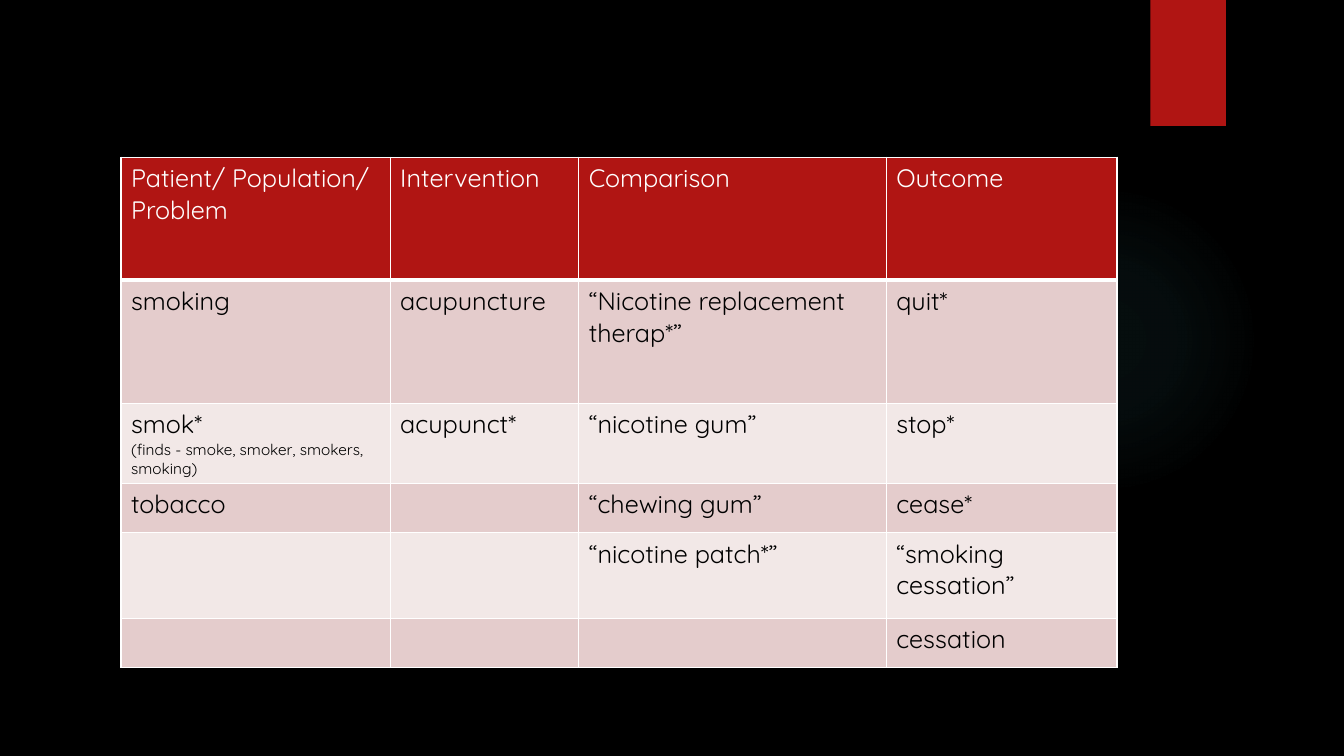
"""Build a slide with a table of search terms for a clinical question."""
import pptx
import pptx.dml.color
import pptx.enum.shapes
import pptx.oxml
import pptx.oxml.ns
import pptx.util

inch = pptx.util.Inches
kinds = pptx.enum.shapes.MSO_SHAPE
ns = pptx.oxml.ns.nsdecls("a")
red, black, white = "B01513", "000000", "FFFFFF"
bands = ["E4CCCC", "F2E8E7"]


def paint(fill, tone):
    fill.solid()
    fill.fore_color.rgb = pptx.dml.color.RGBColor.from_string(tone)


def add_box(kind, *at):
    box = slide.shapes.add_shape(kind, *map(inch, at))
    box.shadow.inherit = False
    box.line.fill.background()
    return box


deck = pptx.Presentation()
deck.slide_width, deck.slide_height = inch(13.33), inch(7.5)
slide = deck.slides.add_slide(deck.slide_layouts[6])
paint(slide.background.fill, black)

glow = add_box(kinds.OVAL, 9.41, 1.83, 3.08, 3.08)
glow.fill.background()
stops = "".join(
    f'<a:gs pos="{pos}000"><a:srgbClr val="50B9C1"><a:alpha val="{alpha}000"/></a:srgbClr></a:gs>'
    for pos, alpha in [(0, 7), (36, 6), (69, 0)]
)
grad = pptx.oxml.parse_xml(
    f'<a:gradFill {ns}><a:gsLst>{stops}</a:gsLst><a:path path="circle">'
    '<a:fillToRect l="50000" t="50000" r="50000" b="50000"/></a:path></a:gradFill>'
)
props = glow.element.spPr
props.replace(props.find(pptx.oxml.ns.qn("a:noFill")), grad)

tab = add_box(kinds.RECTANGLE, 11.41, 0, 0.75, 1.25)
paint(tab.fill, red)

terms = [
    ["Patient/ Population/ Problem", "Intervention", "Comparison", "Outcome"],
    ["smoking", "acupuncture", "“Nicotine replacement therap*”", "quit*"],
    ["smok*\n(finds - smoke, smoker, smokers, smoking)", "acupunct*", "“nicotine gum”", "stop*"],
    ["tobacco", "", "“chewing gum”", "cease*"],
    ["", "", "“nicotine patch*”", "“smoking cessation”"],
    ["", "", "", "cessation"],
]
wide = [2.67, 1.87, 3.05, 2.29]
high = [1.22, 1.22, 0.64, 0.49, 0.85, 0.49]
frame = slide.shapes.add_table(
    len(high), len(wide), inch(1.2), inch(1.56), inch(sum(wide)), inch(sum(high))
)
table = frame.table
for col, size in zip(table.columns, wide):
    col.width = inch(size)
for row, size in zip(table.rows, high):
    row.height = inch(size)

for r, line in enumerate(terms):
    for c, text in enumerate(line):
        cell = table.cell(r, c)
        tcpr = cell._tc.get_or_add_tcPr()
        for side in "LRTB":
            width = 3 if r == 0 and side == "B" else 1
            tcpr.append(pptx.oxml.parse_xml(
                f'<a:ln{side} {ns} w="{width * 12700}"><a:solidFill>'
                f'<a:srgbClr val="{white}"/></a:solidFill></a:ln{side}>'
            ))
        paint(cell.fill, bands[(r - 1) % 2] if r else red)
        if not text:
            continue
        for n, part in enumerate(text.split("\n")):
            para = cell.text_frame.add_paragraph() if n else cell.text_frame.paragraphs[0]
            run = para.add_run()
            run.text = part
            run.font.name = "Quicksand"
            run.font.size = pptx.util.Pt(11 if n else 18)
            run.font.bold = False
            paint(run.font.fill, black if r else white)

deck.save("out.pptx")
